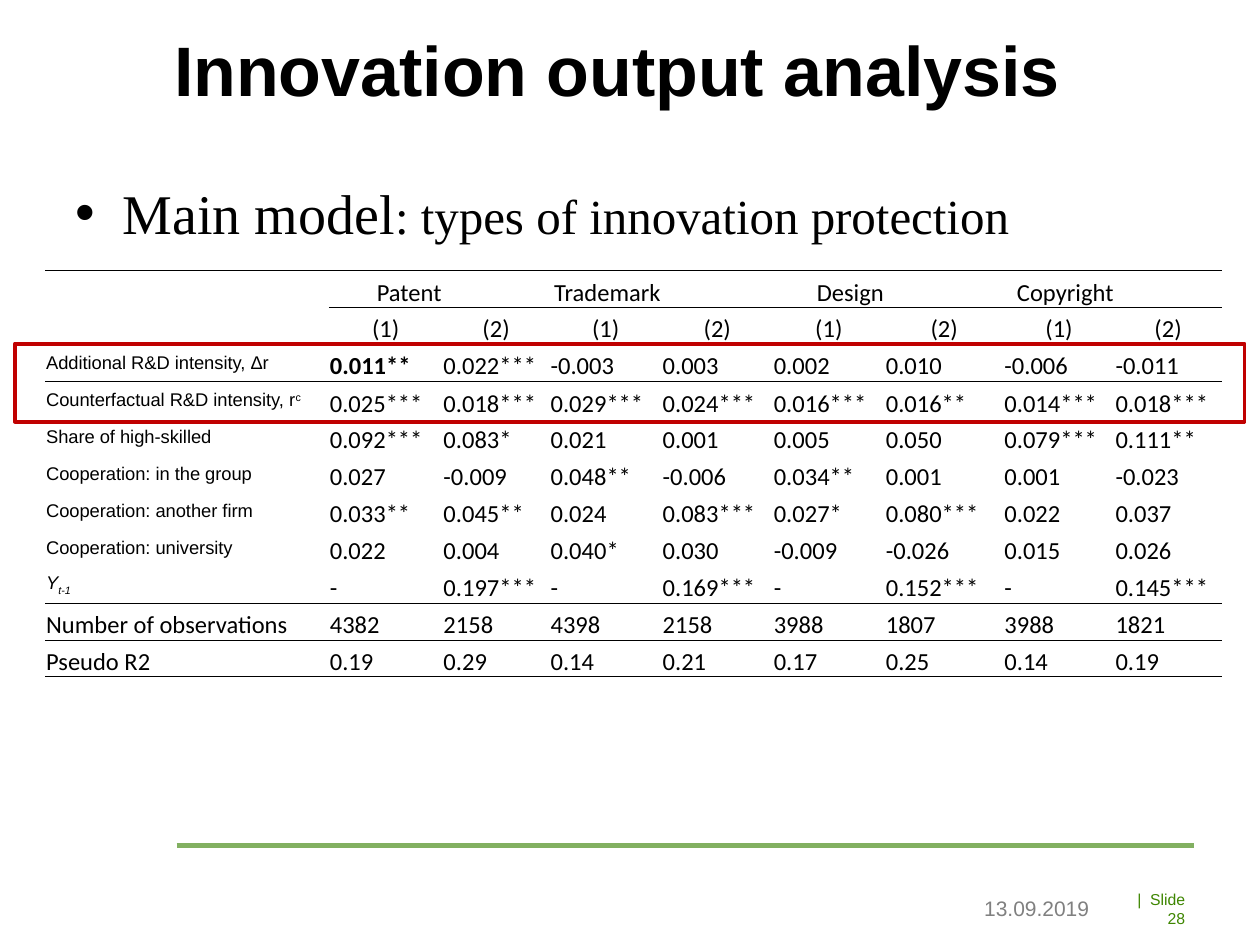
from lxml import etree
from pptx import Presentation
from pptx.dml.color import RGBColor
from pptx.enum.shapes import MSO_CONNECTOR, MSO_SHAPE
from pptx.enum.text import MSO_ANCHOR, PP_ALIGN
from pptx.oxml.ns import qn
from pptx.util import Cm, Pt

BLACK = RGBColor(0x00, 0x00, 0x00)
GREY = RGBColor(0x80, 0x80, 0x80)
GREEN = RGBColor(0x3E, 0x86, 0x01)
LIGHT_GREEN = RGBColor(0x82, 0xB0, 0x61)
RED = RGBColor(0xC0, 0x00, 0x00)

LEFT, CENTER, RIGHT, JUSTIFY = (
    PP_ALIGN.LEFT, PP_ALIGN.CENTER, PP_ALIGN.RIGHT, PP_ALIGN.JUSTIFY)
TOP, MIDDLE, BOTTOM = MSO_ANCHOR.TOP, MSO_ANCHOR.MIDDLE, MSO_ANCHOR.BOTTOM
STRAIGHT, RECTANGLE = MSO_CONNECTOR.STRAIGHT, MSO_SHAPE.RECTANGLE

NO_GRID_STYLE = "{2D5ABB26-0587-4C30-8999-92F81FD0307C}"
COLUMN_WIDTHS = [5.72, 2.29, 2.16, 2.26, 2.24, 2.26, 2.39, 2.24, 2.16]
ROW_HEIGHT, TALL_ROW_HEIGHT = 0.74, 0.76
SCRIPT_ROWS = (3, 8)

GROUPS = ["Patent", "Trademark", "Design", "Copyright"]
COEFFICIENTS = [
    ([("Additional R&D intensity, Δr", 0)],
     "0.011** 0.022*** -0.003 0.003 0.002 0.010 -0.006 -0.011"),
    ([("Counterfactual R&D intensity, r", 0), ("c", 30000)],
     "0.025*** 0.018*** 0.029*** 0.024*** 0.016*** 0.016** 0.014*** 0.018***"),
    ([("Share of high-skilled", 0)],
     "0.092*** 0.083* 0.021 0.001 0.005 0.050 0.079*** 0.111**"),
    ([("Cooperation: in the group", 0)],
     "0.027 -0.009 0.048** -0.006 0.034** 0.001 0.001 -0.023"),
    ([("Cooperation: another firm", 0)],
     "0.033** 0.045** 0.024 0.083*** 0.027* 0.080*** 0.022 0.037"),
    ([("Cooperation: university", 0)],
     "0.022 0.004 0.040* 0.030 -0.009 -0.026 0.015 0.026"),
    ([("Y", 0), ("t-1", -25000)],
     "- 0.197*** - 0.169*** - 0.152*** - 0.145***"),
]
STATISTICS = [
    ("Number of observations", "4382 2158 4398 2158 3988 1807 3988 1821"),
    ("Pseudo R2", "0.19 0.29 0.14 0.21 0.17 0.25 0.14 0.19"),
]


def add_run(p, text, font, size, color=BLACK, bold=False, italic=False, baseline=0):
    r = p.add_run()
    r.text = text
    r.font.color.rgb = color
    style = {"name": font, "size": Pt(size), "bold": bold, "italic": italic}
    for name, value in style.items():
        setattr(r.font, name, value)
    if baseline:
        r.font._element.set("baseline", str(baseline))


def add_title(s, x, y, w, h):
    sp = s.shapes.title
    sp.left, sp.top, sp.width, sp.height = Cm(x), Cm(y), Cm(w), Cm(h)
    tf = sp.text_frame
    frame = {"margin_left": 0, "margin_right": 0, "margin_top": 0,
             "margin_bottom": 0, "vertical_anchor": TOP, "word_wrap": True}
    for name, value in frame.items():
        setattr(tf, name, value)
    p = tf.paragraphs[0]
    p.alignment = LEFT
    add_run(p, "Innovation output analysis", "Arial", 40, bold=True)


def add_text_box(s, x, y, w, h, anchor=TOP, align=LEFT):
    tf = s.shapes.add_textbox(Cm(x), Cm(y), Cm(w), Cm(h)).text_frame
    tf.word_wrap = True
    tf.vertical_anchor = anchor
    p = tf.paragraphs[0]
    p.alignment = align
    return tf, p


def add_subject(s, x, y, w, h):
    tf, p = add_text_box(s, x, y, w, h)
    tf.margin_top = Cm(0.27)
    pPr = p._p.get_or_add_pPr()
    pPr.set("marL", str(Cm(0.95)))
    pPr.set("indent", str(-Cm(0.95)))
    etree.SubElement(pPr, qn("a:buFont"), typeface="Arial")
    etree.SubElement(pPr, qn("a:buChar"), char="•")
    add_run(p, "Main model", "Times New Roman", 32)
    add_run(p, ": types of innovation protection", "Times New Roman", 28)


def add_border(cell, side):
    ln = etree.SubElement(cell._tc.get_or_add_tcPr(), qn(f"a:{side}"), w=str(Pt(0.5)))
    fill = etree.SubElement(ln, qn("a:solidFill"))
    etree.SubElement(fill, qn("a:srgbClr"), val=str(BLACK))


def fill_cell(cell, parts, align=LEFT, anchor=BOTTOM, font="Calibri", size=14, **style):
    cell.vertical_anchor = anchor
    p = cell.text_frame.paragraphs[0]
    p.alignment = align
    for text, baseline in parts:
        add_run(p, text, font, size, baseline=baseline, **style)


def draw_rules(table):
    last = len(table.rows) - 1
    for i, row in enumerate(table.rows):
        for j, cell in enumerate(row.cells):
            if i in (0, 2, 9) or (i == 1 and j > 0):
                add_border(cell, "lnT")
            if i in (1, 8, last) or (i == 0 and j > 0):
                add_border(cell, "lnB")
            cell.fill.background()
            margins = {"margin_left": Cm(0.02), "margin_right": Cm(0.02),
                       "margin_top": Cm(0.02), "margin_bottom": 0}
            for name, value in margins.items():
                setattr(cell, name, value)
            if not cell.text:
                etree.SubElement(cell.text_frame.paragraphs[0]._p,
                                 qn("a:endParaRPr"), sz="1400")


def add_results_table(s, x, y, w, h):
    count = 2 + len(COEFFICIENTS) + len(STATISTICS)
    table = s.shapes.add_table(count, len(COLUMN_WIDTHS),
                               Cm(x), Cm(y), Cm(w), Cm(h)).table
    table.first_row = table.horz_banding = False
    table._tbl.tblPr.find(qn("a:tableStyleId")).text = NO_GRID_STYLE
    for column, width in zip(table.columns, COLUMN_WIDTHS):
        column.width = Cm(width)
    for i, row in enumerate(table.rows):
        row.height = Cm(TALL_ROW_HEIGHT if i in SCRIPT_ROWS else ROW_HEIGHT)

    for g, group in enumerate(GROUPS):
        fill_cell(table.cell(0, 2 * g + 1), [(group, 0)], RIGHT)
        for k in (1, 2):
            fill_cell(table.cell(1, 2 * g + k), [(f"({k})", 0)], CENTER)
    for i, (label, values) in enumerate(COEFFICIENTS + STATISTICS, start=2):
        if isinstance(label, str):
            fill_cell(table.cell(i, 0), [(label, 0)])
        else:
            fill_cell(table.cell(i, 0), label, JUSTIFY, MIDDLE, "Arial", 10.5,
                      italic=label[0][0] == "Y")
        for j, value in enumerate(values.split(), start=1):
            fill_cell(table.cell(i, j), [(value, 0)], bold=(i, j) == (2, 1))
    draw_rules(table)


def add_highlight(s, x, y, w, h):
    sp = s.shapes.add_shape(RECTANGLE, Cm(x), Cm(y), Cm(w), Cm(h))
    sp.shadow.inherit = False
    sp.fill.background()
    sp.line.color.rgb = RED
    sp.line.width = Pt(2.25)


def add_footer(s, x, y, w, h):
    line = s.shapes.add_connector(STRAIGHT, Cm(x), Cm(y), Cm(x + w), Cm(y))
    line.line.color.rgb = LIGHT_GREEN
    line.line.width = Pt(3)
    etree.SubElement(line._element.spPr, qn("a:effectLst"))
    text_height, date_width = 0.79, 2.72
    text_y = y + h - text_height
    date_x = x + 16.03
    _, p = add_text_box(s, date_x, text_y, date_width, text_height)
    add_run(p, "13.09.2019", "Arial", 12, GREY)
    _, p = add_text_box(s, date_x + date_width, text_y, 1.83, text_height, MIDDLE, RIGHT)
    add_run(p, "|  Slide 28", "Arial", 9, GREEN)


def main():
    prs = Presentation()
    prs.slide_width, prs.slide_height = Cm(25.4), Cm(19.05)
    s = prs.slides.add_slide(prs.slide_layouts[5])
    add_footer(s, 3.56, 17.04, 20.5, 1.68)
    add_title(s, 3.51, 0.53, 20.62, 3.18)
    add_subject(s, 1.27, 3.33, 22.86, 1.52)
    add_results_table(s, 0.91, 5.46, 23.67, 8.15)
    add_highlight(s, 0.3, 6.93, 24.79, 1.57)
    prs.save("out.pptx")


if __name__ == "__main__":
    main()
